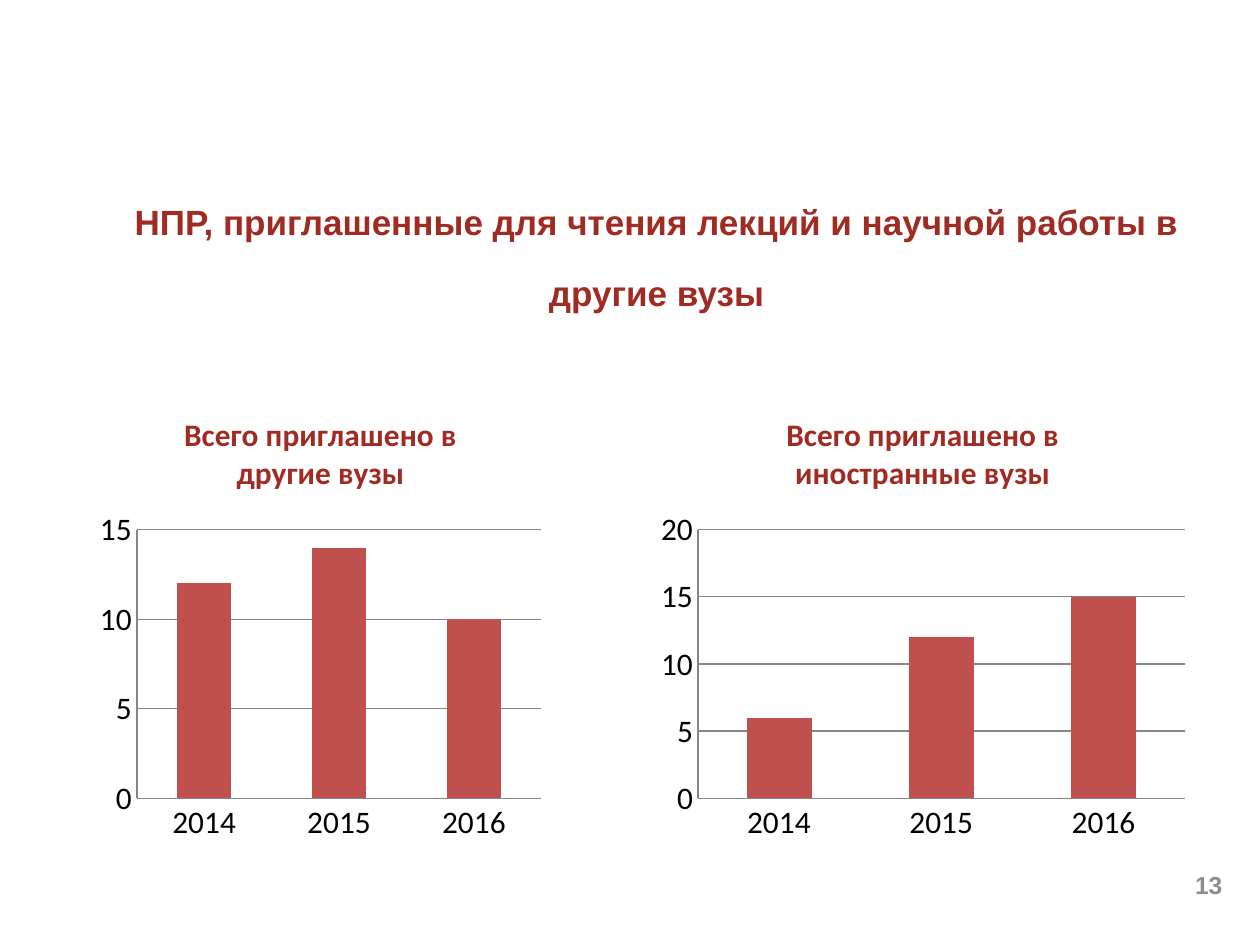
from pptx import Presentation
from pptx.chart.data import CategoryChartData
from pptx.dml.color import RGBColor
from pptx.enum.chart import XL_CHART_TYPE, XL_TICK_MARK
from pptx.enum.text import MSO_ANCHOR, PP_ALIGN
from pptx.util import Pt

COLORS = {"heading": "9F2B22", "bar": "C0504D", "line": "868686",
          "text": "000000", "number": "8C8C8C"}
YEARS = ["2014", "2015", "2016"]


def color(name):
    return RGBColor.from_string(COLORS[name])


def style_font(font, name, size, color_name, bold=False):
    font.name = name
    font.size = Pt(size)
    font.bold = bold
    font.color.rgb = color(color_name)


def add_text(slide, box, text, size, color_name, alignment,
             anchor=MSO_ANCHOR.TOP, line_spacing=1):
    shape = slide.shapes.add_textbox(*map(Pt, box))
    text_frame = shape.text_frame
    text_frame.word_wrap = True
    text_frame.vertical_anchor = anchor
    text_frame.text = text
    paragraph = text_frame.paragraphs[0]
    paragraph.alignment = alignment
    paragraph.line_spacing = line_spacing
    style_font(paragraph.runs[0].font, "Arial", size, color_name, bold=True)


def add_invitation_chart(slide, box, title, values, maximum):
    data = CategoryChartData()
    data.categories = YEARS
    data.add_series("Series 1", values)
    chart = slide.shapes.add_chart(
        XL_CHART_TYPE.COLUMN_CLUSTERED, *map(Pt, box), data).chart
    style_font(chart.font, "Calibri", 17.9, "text")
    chart.has_legend = False

    chart.has_title = True
    chart.chart_title.include_in_layout = False
    title_frame = chart.chart_title.text_frame
    title_frame.text = title
    style_font(title_frame.paragraphs[0].runs[0].font,
               "Calibri", 17.9, "heading", bold=True)

    plot = chart.plots[0]
    plot.gap_width = 150
    plot.vary_by_categories = False
    fill = plot.series[0].format.fill
    fill.solid()
    fill.fore_color.rgb = color("bar")

    value_axis = chart.value_axis
    value_axis.minimum_scale = 0
    value_axis.maximum_scale = maximum
    value_axis.major_unit = 5
    value_axis.has_major_gridlines = True
    for axis in (chart.category_axis, value_axis):
        axis.major_tick_mark = XL_TICK_MARK.NONE
    for part in (chart.category_axis, value_axis, value_axis.major_gridlines):
        part.format.line.color.rgb = color("line")
        part.format.line.width = Pt(0.75)


def main():
    presentation = Presentation()
    presentation.slide_width = Pt(720)
    presentation.slide_height = Pt(540)
    slide = presentation.slides.add_slide(presentation.slide_layouts[6])

    add_text(slide, (537.84, 491, 167.76, 28.8), "13", 14, "number",
             PP_ALIGN.RIGHT, anchor=MSO_ANCHOR.MIDDLE)
    add_invitation_chart(slide, (51.84, 223.2, 262.8, 262.8),
                         "Всего приглашено в другие вузы", (12, 14, 10), 15)
    add_invitation_chart(slide, (371.52, 223.2, 311.76, 262.8),
                         "Всего приглашено в иностранные вузы", (6, 12, 15), 20)
    add_text(slide, (60.48, 94.32, 629.28, 95.76),
             "НПР, приглашенные для чтения лекций и научной работы в другие вузы",
             20, "heading", PP_ALIGN.CENTER, line_spacing=1.7)
    presentation.save("out.pptx")


if __name__ == "__main__":
    main()
